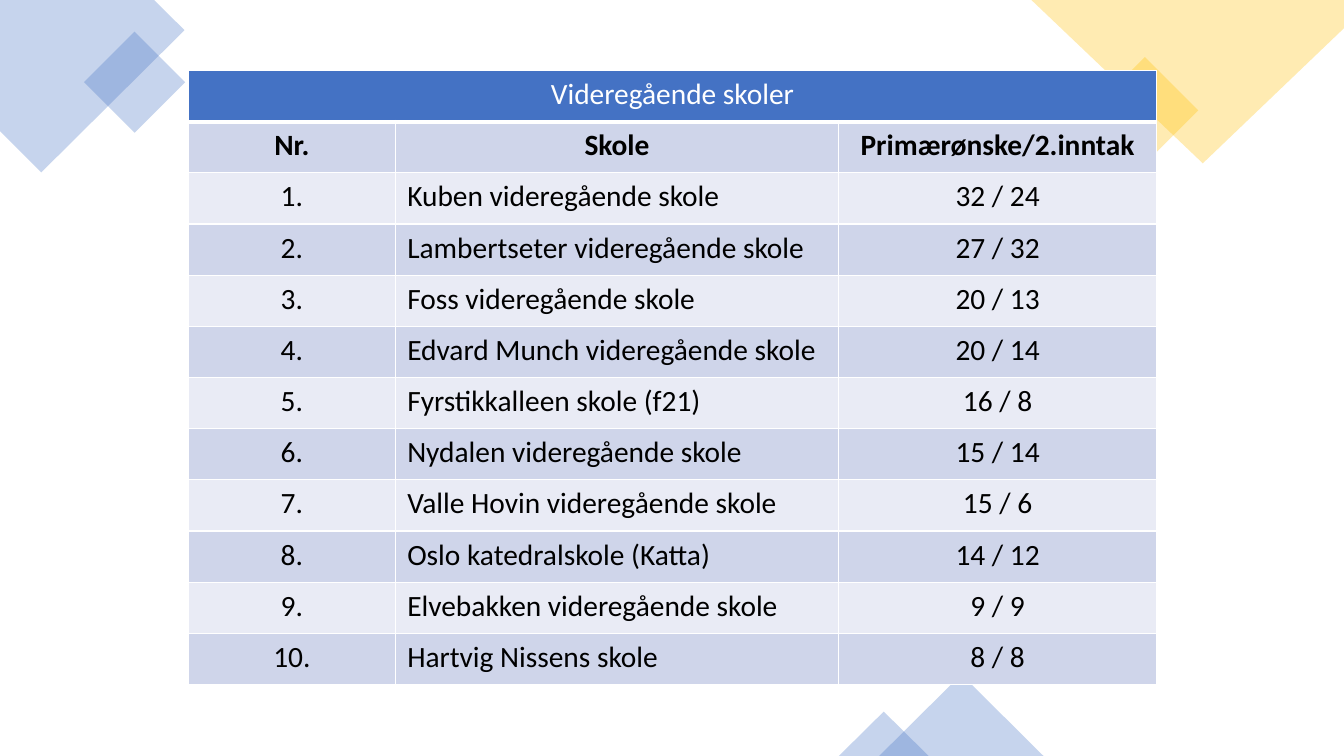
from lxml import etree
from pptx import Presentation
from pptx.dml.color import RGBColor
from pptx.enum.shapes import MSO_SHAPE
from pptx.enum.text import PP_ALIGN
from pptx.oxml.ns import qn
from pptx.util import Inches, Pt

SQUARE = MSO_SHAPE.RECTANGLE
TRIANGLE = MSO_SHAPE.ISOSCELES_TRIANGLE
LEFT, CENTER = PP_ALIGN.LEFT, PP_ALIGN.CENTER

BLUE = RGBColor(0x44, 0x72, 0xC4)
YELLOW = RGBColor(0xFF, 0xC0, 0x00)
DARK_BAND = RGBColor(0xCF, 0xD5, 0xEA)
LIGHT_BAND = RGBColor(0xE9, 0xEB, 0xF5)
WHITE = RGBColor(0xFF, 0xFF, 0xFF)
BLACK = RGBColor(0x00, 0x00, 0x00)

TITLE = "Videregående skoler"
HEADINGS = ("Nr.", "Skole", "Primærønske/2.inntak")
SCHOOLS = (
    ("Kuben videregående skole", "32 / 24"),
    ("Lambertseter videregående skole", "27 / 32"),
    ("Foss videregående skole", "20 / 13"),
    ("Edvard Munch videregående skole", "20 / 14"),
    ("Fyrstikkalleen skole (f21)", "16 / 8"),
    ("Nydalen videregående skole", "15 / 14"),
    ("Valle Hovin videregående skole", "15 / 6"),
    ("Oslo katedralskole (Katta)", "14 / 12"),
    ("Elvebakken videregående skole", "9 / 9"),
    ("Hartvig Nissens skole", "8 / 8"),
)


def write_text(frame, text, size=21, color=BLACK, bold=False, align=CENTER):
    paragraph = frame.paragraphs[0]
    paragraph.alignment = align
    run = paragraph.add_run()
    run.text = text
    run.font.name = "Calibri"
    run.font.size = Pt(size)
    run.font.bold = bold
    run.font.color.rgb = color


class SlideBuilder:
    opacity = 30
    border_color = WHITE

    def __init__(self, slide):
        self.slide = slide

    def tint(self, shape, color):
        shape.shadow.inherit = False
        shape.line.fill.background()
        shape.fill.solid()
        shape.fill.fore_color.rgb = color
        color_element = shape.fill._xPr.find(".//" + qn("a:srgbClr"))
        alpha = etree.SubElement(color_element, qn("a:alpha"))
        alpha.set("val", str(self.opacity * 1000))

    def shape(self, kind, left, top, width, height, color, rotation=0):
        shape = self.slide.shapes.add_shape(
            kind, Inches(left), Inches(top), Inches(width), Inches(height))
        shape.rotation = rotation
        self.tint(shape, color)

    def outline(self, points, color):
        corners = [(Inches(x), Inches(y)) for x, y in points]
        builder = self.slide.shapes.build_freeform(*corners[0])
        builder.add_line_segments(corners[1:], close=True)
        self.tint(builder.convert_to_shape(), color)

    def borders(self, cell, top, bottom):
        properties = cell._tc.get_or_add_tcPr()
        for side, width in (("L", 1), ("R", 1), ("T", top), ("B", bottom)):
            line = etree.SubElement(properties, qn(f"a:ln{side}"), w=str(Pt(width)))
            fill = etree.SubElement(line, qn("a:solidFill"))
            etree.SubElement(fill, qn("a:srgbClr"), val=str(self.border_color))

    def cell(self, cell, fill, text="", top=1, bottom=1, **text_format):
        cell.margin_left = cell.margin_right = Inches(0.12)
        cell.margin_top = cell.margin_bottom = Inches(0.06)
        self.borders(cell, top, bottom)
        cell.fill.solid()
        cell.fill.fore_color.rgb = fill
        if text:
            write_text(cell.text_frame, text, **text_format)

    def school_table(self, left, top, height, column_widths):
        row_count = len(SCHOOLS) + 2
        table = self.slide.shapes.add_table(
            row_count, len(column_widths), Inches(left), Inches(top),
            Inches(sum(column_widths)), Inches(height)).table
        for column, width in zip(table.columns, column_widths):
            column.width = Inches(width)

        table.cell(0, 0).merge(table.cell(0, len(column_widths) - 1))
        for index, text in enumerate((TITLE, "", "")):
            self.cell(table.cell(0, index), BLUE, text, bottom=3, color=WHITE)
        for index, heading in enumerate(HEADINGS):
            self.cell(table.cell(1, index), DARK_BAND, heading, top=3, bold=True)
        for number, (school, wishes) in enumerate(SCHOOLS, 1):
            band = LIGHT_BAND if number % 2 else DARK_BAND
            for index, text in enumerate((f"{number}.", school, wishes)):
                self.cell(table.cell(number + 1, index), band, text,
                          align=LEFT if index == 1 else CENTER)


def main():
    presentation = Presentation()
    presentation.slide_width = Inches(13.33)
    presentation.slide_height = Inches(7.5)
    builder = SlideBuilder(
        presentation.slides.add_slide(presentation.slide_layouts[6]))

    builder.outline(
        [(1.53, 0), (0, 0), (0, 1.3), (0.41, 1.71), (1.83, 0.3)], BLUE)
    builder.shape(SQUARE, 0.98, 0.46, 0.71, 0.71, BLUE, rotation=315)
    builder.shape(SQUARE, 10.98, 0.72, 0.75, 0.75, YELLOW, rotation=315)
    builder.outline(
        [(13.33, 0), (10.23, 0), (11.93, 1.62), (13.33, 0.28)], YELLOW)
    builder.shape(TRIANGLE, 8.72, 6.69, 1.63, 0.81, BLUE)
    builder.shape(TRIANGLE, 8.32, 7.06, 0.89, 0.44, BLUE)
    builder.school_table(1.87, 0.7, 6.09, (2.05, 4.4, 3.15))

    presentation.save("out.pptx")


if __name__ == "__main__":
    main()
